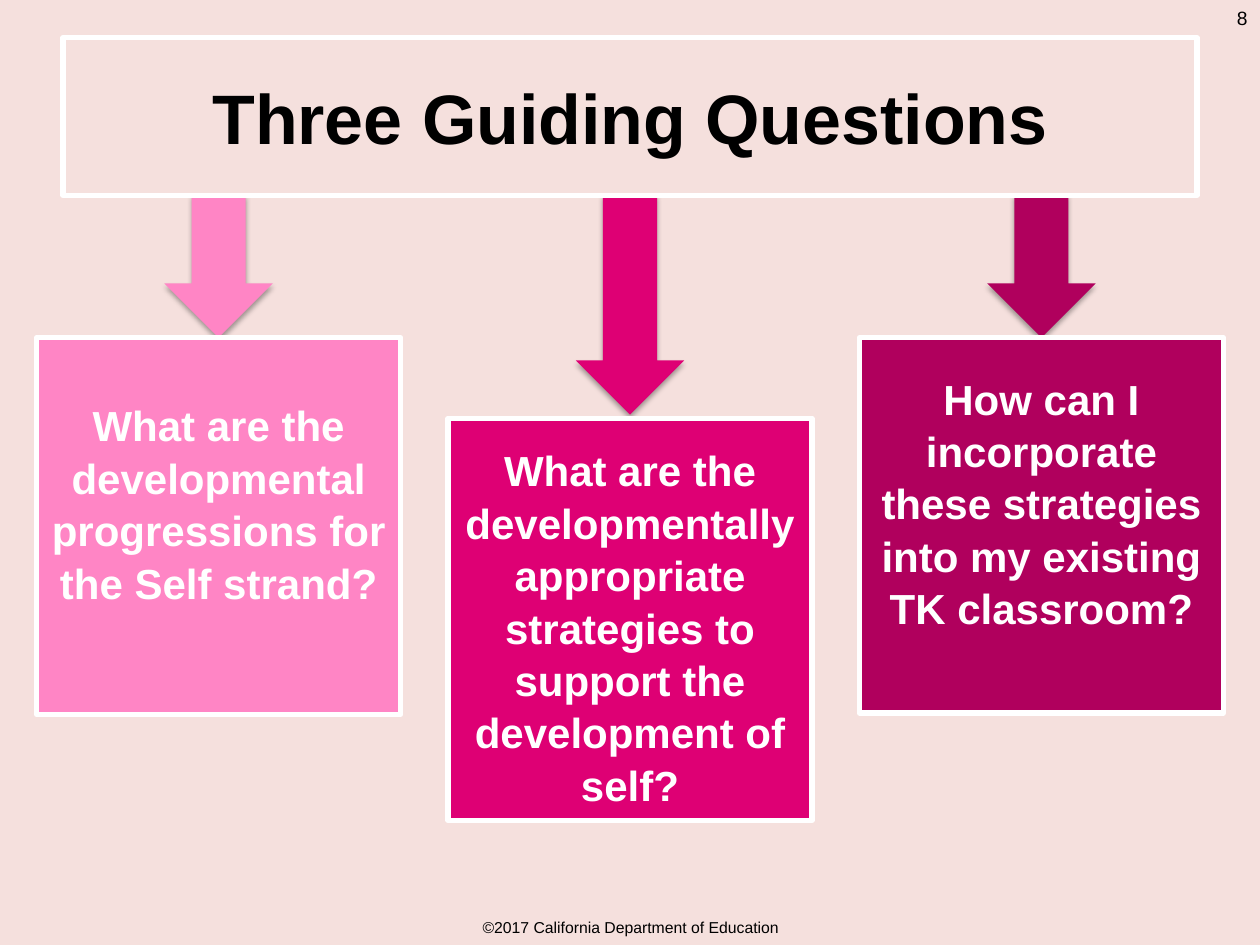
from dataclasses import dataclass

from lxml.etree import SubElement
from pptx import Presentation
from pptx.dml.color import RGBColor
from pptx.enum.shapes import MSO_SHAPE
from pptx.enum.text import MSO_ANCHOR, MSO_AUTO_SIZE, PP_ALIGN
from pptx.oxml.ns import qn
from pptx.util import Inches, Pt


@dataclass(frozen=True)
class Theme:
    """Colours, font and type sizes of the slide."""
    font: str = "Arial"
    background: str = "F5E0DD"
    ink: str = "000000"
    white: str = "FFFFFF"
    pinks: tuple = ("FF85C5", "DE0074", "B0005D")
    title: int = 40
    question: int = 24
    number: int = 11
    footer: int = 9
    border: int = 3


THEME = Theme()
TITLE_BOX = (0.5, 0.3, 9, 1.25)
CARD_LEFT, CARD_PITCH, CARD_WIDTH = 0.29, 3.265, 2.89
ARROW_WIDTH = 0.86
QUESTIONS = [
    ("What are the developmental progressions for the Self strand?",
     2.68, 2.99, 1.13, 0.05, 0.42),
    ("What are the developmentally appropriate strategies to support "
     "the development of self?", 3.32, 3.19, 1.74, 0.16, 0.05),
    ("How can I incorporate these strategies into my existing TK classroom?",
     2.68, 2.98, 1.13, 0.05, 0.42),
]


def rgb(value):
    """Return a colour from its hex text."""
    return RGBColor.from_string(value)


def place(sp, box):
    """Move and size a shape to a box in inches."""
    sp.left, sp.top, sp.width, sp.height = map(Inches, box)


def write(sp, text, size, color, align, bold=False):
    """Fill a shape with one formatted paragraph."""
    tf = sp.text_frame
    tf.text = text
    tf.word_wrap = True
    tf.auto_size = MSO_AUTO_SIZE.NONE
    p = tf.paragraphs[0]
    p.alignment = align
    p.space_before = Pt(0)
    font = p.runs[0].font
    font.name, font.size, font.bold = THEME.font, Pt(size), bold
    font.color.rgb = rgb(color)
    return tf


def outline(sp):
    """Give a shape the white border."""
    sp.line.color.rgb = rgb(THEME.white)
    sp.line.width = Pt(THEME.border)


def add_title(s, text, box):
    """Place the bordered title."""
    sp = s.shapes.title
    place(sp, box)
    outline(sp)
    tf = write(sp, text, THEME.title, THEME.ink, PP_ALIGN.CENTER, True)
    tf.vertical_anchor = MSO_ANCHOR.MIDDLE


def add_card(sp, text, color, box, inset_top, inset_bottom):
    """Turn a body placeholder into a coloured question card."""
    place(sp, box)
    sp.fill.solid()
    sp.fill.fore_color.rgb = rgb(color)
    outline(sp)
    tf = write(sp, text, THEME.question, THEME.white, PP_ALIGN.CENTER, True)
    tf.vertical_anchor = MSO_ANCHOR.MIDDLE
    tf.margin_top, tf.margin_bottom = Inches(inset_top), Inches(inset_bottom)
    p = tf.paragraphs[0]
    p.line_spacing = 1.04
    pPr = p._p.get_or_add_pPr()
    pPr.set("marL", "0")
    pPr.set("indent", "0")
    SubElement(pPr, qn("a:buNone"))


def add_shadow(sp):
    """Give a shape a soft shadow below it."""
    sp.shadow.inherit = False
    effects = sp._element.spPr.find(qn("a:effectLst"))
    shadow = SubElement(effects, qn("a:outerShdw"), blurRad=str(Pt(3.1)),
                        dist=str(Pt(1.8)), dir="5400000", rotWithShape="0")
    color = SubElement(shadow, qn("a:srgbClr"), val=THEME.ink)
    SubElement(color, qn("a:alpha"), val="35000")


def add_arrow(s, color, center, top, length):
    """Add a downward arrow behind the title and cards."""
    box = (center - length / 2, top + (length - ARROW_WIDTH) / 2, length, ARROW_WIDTH)
    sp = s.shapes.add_shape(MSO_SHAPE.RIGHT_ARROW, *map(Inches, box))
    sp.rotation = 90
    sp.fill.solid()
    sp.fill.fore_color.rgb = rgb(color)
    sp.line.fill.background()
    add_shadow(sp)
    s.shapes._spTree.insert(2, sp._element)


def add_questions(s, left, title_bottom):
    """Place the three cards and the arrows leading to them."""
    bodies = list(s.placeholders)[1:]
    for i, (sp, color, question) in enumerate(zip(bodies, THEME.pinks, QUESTIONS)):
        text, top, height, length, inset_top, inset_bottom = question
        x = left + i * CARD_PITCH
        add_card(sp, text, color, (x, top, CARD_WIDTH, height), inset_top, inset_bottom)
        add_arrow(s, color, x + CARD_WIDTH / 2, title_bottom, length)
    for sp in bodies[len(QUESTIONS):]:
        sp._element.getparent().remove(sp._element)


def add_label(s, text, size, align, anchor, box):
    """Add a small line of text."""
    sp = s.shapes.add_textbox(*map(Inches, box))
    write(sp, text, size, THEME.ink, align).vertical_anchor = anchor


def main():
    """Build and save the slide."""
    prs = Presentation()
    prs.slide_width, prs.slide_height = Inches(10), Inches(7.5)
    s = prs.slides.add_slide(prs.slide_layouts.get_by_name("Comparison"))
    s.background.fill.solid()
    s.background.fill.fore_color.rgb = rgb(THEME.background)
    add_title(s, "Three Guiding Questions", TITLE_BOX)
    add_questions(s, CARD_LEFT, TITLE_BOX[1] + TITLE_BOX[3])
    add_label(s, "©2017 California Department of Education", THEME.footer,
              PP_ALIGN.CENTER, MSO_ANCHOR.MIDDLE, (0.38, 7.23, 9.25, 0.25))
    add_label(s, "8", THEME.number, PP_ALIGN.RIGHT, MSO_ANCHOR.TOP, (9.5, 0, 0.5, 0.4))
    prs.save("out.pptx")


if __name__ == "__main__":
    main()
